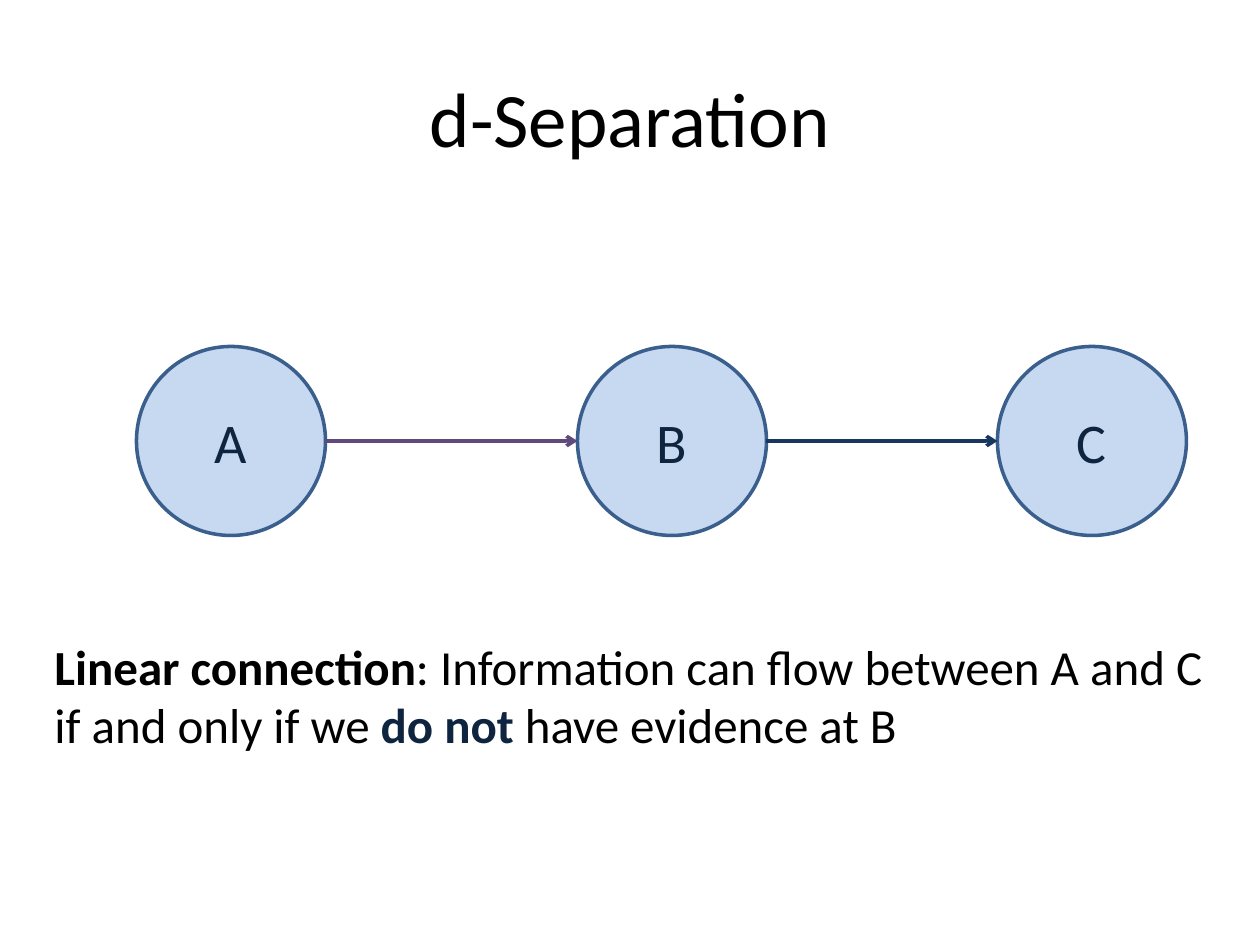
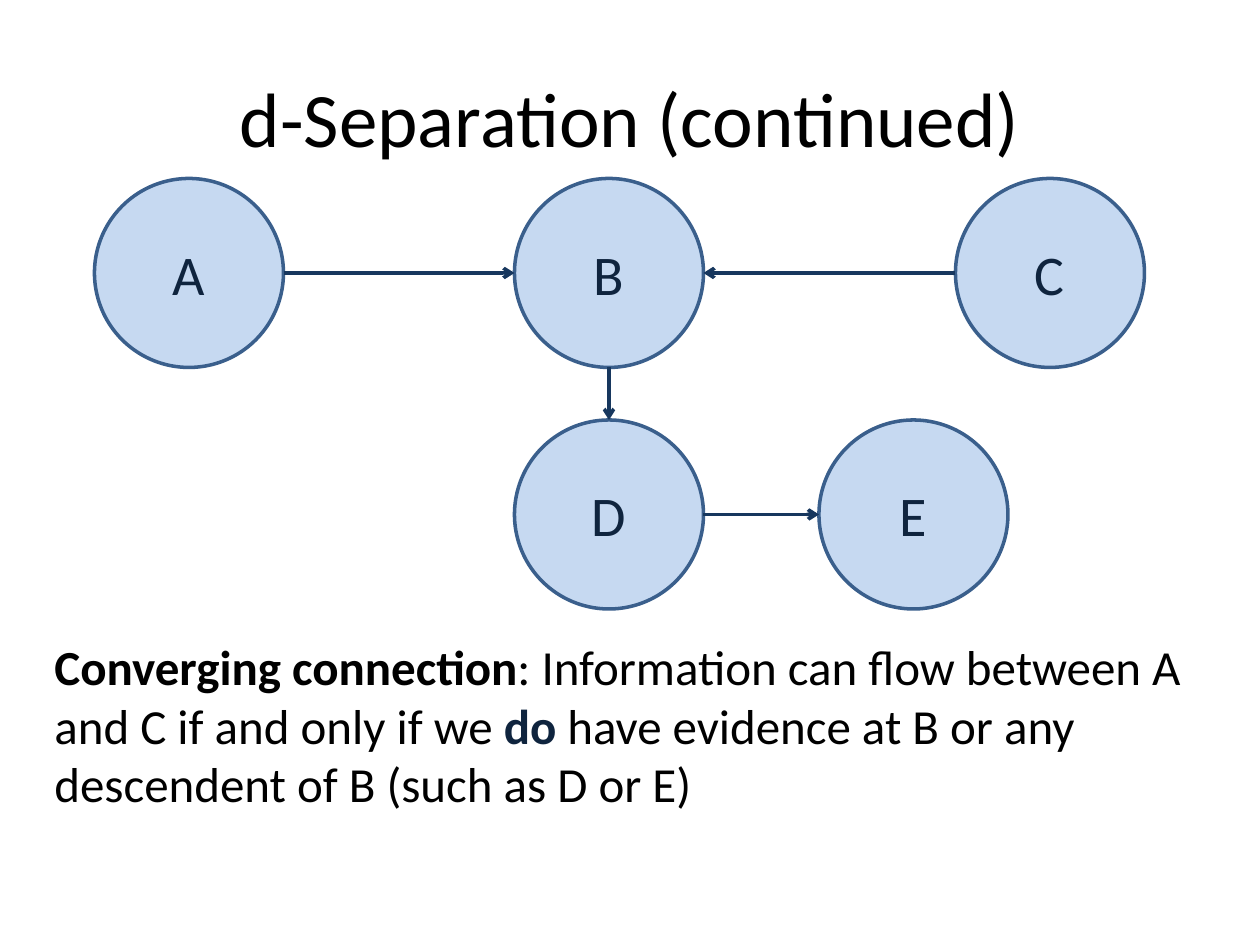
"""Build two slides on d-separation: linear and converging connections."""
import pptx
import pptx.util
import pptx.dml.color
import pptx.enum.shapes
import pptx.enum.text
import pptx.oxml
import pptx.oxml.ns
import lxml.etree

PX = 7620
SIZE = 180
INK, NAVY, BLUE, PLUM = "000000", "0F243E", "17375E", "604A7B"
FILL, EDGE = "C6D9F1", "3A5F8C"


def hue(code):
    return pptx.dml.color.RGBColor.from_string(code)


def style(font, size, color, bold=False):
    form = {"name": "Calibri", "size": pptx.util.Pt(size), "bold": bold}
    for key, value in form.items():
        setattr(font, key, value)
    font.color.rgb = hue(color)


pages = [
    {
        "title": "d-Separation",
        "nodes": {"A": (130, 330), "B": (550, 330), "C": (950, 330)},
        "links": [("A", "B", PLUM), ("B", "C", BLUE)],
        "box": (40, 600, 1124, 125),
        "lines": [
            [("Linear connection", INK, True),
             (": Information can flow between A and C", INK, False)],
            [("if and only if we ", INK, False), ("do not ", NAVY, True),
             ("have evidence at B", INK, False)],
        ],
    },
    {
        "title": "d-Separation (continued)",
        "nodes": {"A": (90, 170), "B": (490, 170), "C": (910, 170),
                  "D": (490, 400), "E": (780, 400)},
        "links": [("A", "B", BLUE), ("C", "B", BLUE),
                  ("B", "D", BLUE), ("D", "E", BLUE)],
        "box": (40, 600, 1110, 181),
        "lines": [
            [("Converging connection", INK, True),
             (": Information can flow between A", INK, False)],
            [("and C if and only if we ", INK, False), ("do ", NAVY, True),
             ("have evidence at B or any", INK, False)],
            [("descendent of B (such as D or E)", INK, False)],
        ],
    },
]

deck = pptx.Presentation()
deck.slide_width, deck.slide_height = 1200 * PX, 900 * PX
middle = pptx.enum.text.MSO_ANCHOR.MIDDLE
center = pptx.enum.text.PP_ALIGN.CENTER

for page in pages:
    slide = deck.slides.add_slide(deck.slide_layouts[5])
    shapes = slide.shapes

    title = shapes.title
    spot = {"left": 60, "top": 36, "width": 1080, "height": 150}
    for key, value in spot.items():
        setattr(title, key, value * PX)
    title.text_frame.text = page["title"]
    title.text_frame.vertical_anchor = middle
    para = title.text_frame.paragraphs[0]
    para.alignment = center
    style(para.runs[0].font, 44, INK)

    for name, (left, top) in page["nodes"].items():
        node = shapes.add_shape(pptx.enum.shapes.MSO_SHAPE.OVAL,
                                left * PX, top * PX, SIZE * PX, SIZE * PX)
        node.shadow.inherit = False
        node.fill.solid()
        node.fill.fore_color.rgb = hue(FILL)
        node.line.color.rgb = hue(EDGE)
        node.line.width = pptx.util.Pt(2)
        node.text_frame.text = name
        node.text_frame.vertical_anchor = middle
        para = node.text_frame.paragraphs[0]
        para.alignment = center
        style(para.runs[0].font, 32, NAVY)

    for tail, head, color in page["links"]:
        start, stop = [], []
        for a, b in zip(page["nodes"][tail], page["nodes"][head]):
            side = (b > a) - (b < a)
            start.append((a + SIZE // 2 * (1 + side)) * PX)
            stop.append((b + SIZE // 2 * (1 - side)) * PX)
        link = shapes.add_connector(pptx.enum.shapes.MSO_CONNECTOR.STRAIGHT,
                                    *start, *stop)
        link.line.color.rgb = hue(color)
        link.line.width = pptx.util.Pt(2)
        stroke = link.line._get_or_add_ln()
        tip = lxml.etree.SubElement(stroke, pptx.oxml.ns.qn("a:tailEnd"))
        tip.set("type", "arrow")
        lxml.etree.SubElement(link._element.spPr,
                              pptx.oxml.ns.qn("a:effectLst"))

    box = shapes.add_textbox(*[value * PX for value in page["box"]])
    frame = box.text_frame
    frame.word_wrap = False
    frame.auto_size = pptx.enum.text.MSO_AUTO_SIZE.SHAPE_TO_FIT_TEXT
    for row, parts in enumerate(page["lines"]):
        para = frame.add_paragraph() if row else frame.paragraphs[0]
        for text, color, bold in parts:
            run = para.add_run()
            run.text = text
            style(run.font, 28, color, bold)

deck.save("out.pptx")
